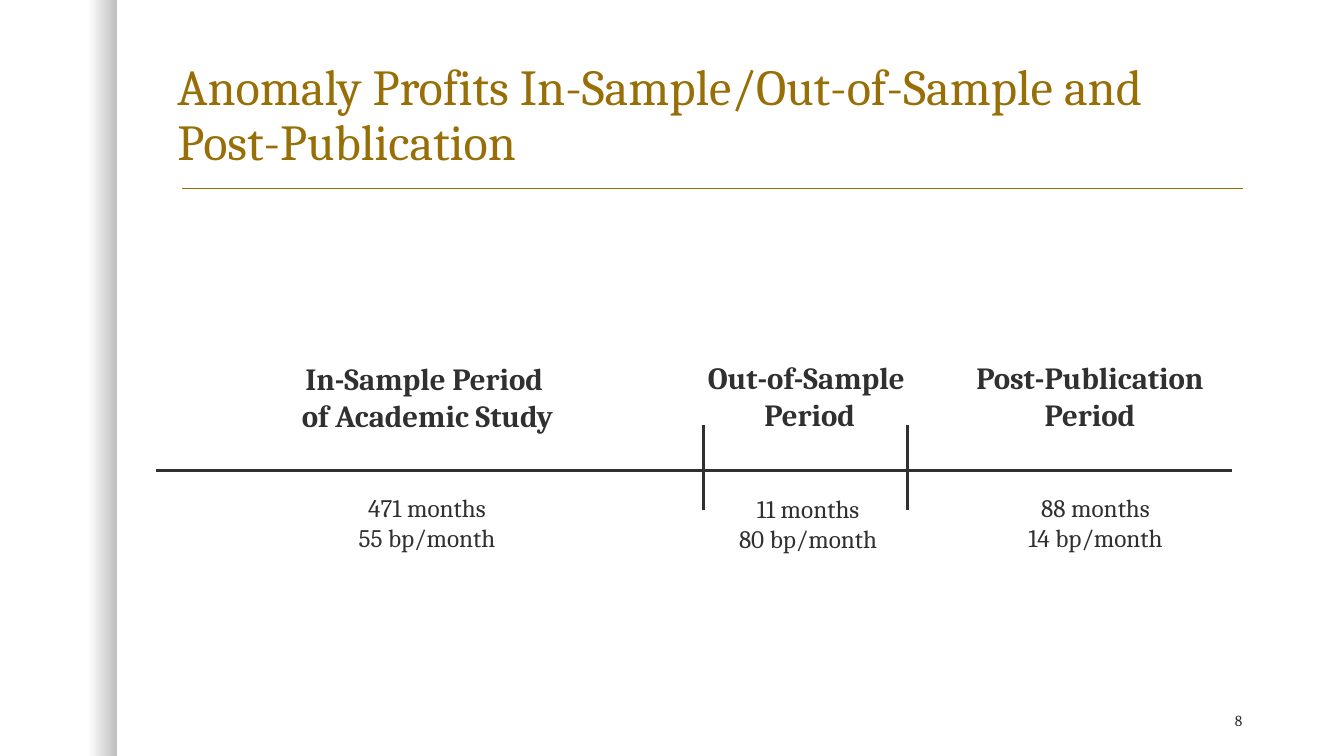
from lxml import etree
from pptx import Presentation
from pptx.dml.color import RGBColor
from pptx.enum import shapes, text
from pptx.oxml.ns import qn
from pptx.util import Inches, Pt

# Content
TITLE = "Anomaly Profits In-Sample/Out-of-Sample and Post-Publication"
PAGE_NUMBER = "8"
# Heading, its box (left, top, width), figures, left and top of their box
PERIODS = [
    ("In-Sample Period \vof Academic Study", (2.85, 3.52, 2.78),
     ["471 months", "55 bp/month"], (3.41, 4.83)),
    ("Out-of-Sample \vPeriod", (6.88, 3.51, 2.3),
     ["11 months", "80 bp/month"], (7.19, 4.84)),
    ("Post-Publication\vPeriod", (9.54, 3.51, 2.54),
     ["88 months", "14 bp/month"], (10.04, 4.83)),
]
PERIOD_BOUNDARIES = [6.98, 9]

FONT = "Cambria"
GOLD, DARK = "986F07", "303030"


def color(hex_string):
    return RGBColor.from_string(hex_string)


def format_text(shape, size, hex_color, align, bold=False):
    for paragraph in shape.text_frame.paragraphs:
        paragraph.alignment = align
        for run in paragraph.runs:
            run.font.name = FONT
            run.font.size = Pt(size)
            run.font.bold = bold
            run.font.color.rgb = color(hex_color)


def add_text(slide, lines, left, top, width, height, size,
             align=text.PP_ALIGN.CENTER, bold=False):
    box = slide.shapes.add_textbox(
        Inches(left), Inches(top), Inches(width), Inches(height))
    box.text_frame.word_wrap = False
    box.text_frame.text = "\n".join(lines)
    format_text(box, size, DARK, align, bold)
    return box


def add_line(slide, x1, y1, x2, y2, hex_color, width):
    line = slide.shapes.add_connector(
        shapes.MSO_CONNECTOR.STRAIGHT,
        Inches(x1), Inches(y1), Inches(x2), Inches(y2))
    line.line.color.rgb = color(hex_color)
    line.line.width = Pt(width)
    etree.SubElement(line._element.spPr, qn("a:effectLst"))


def add_side_band(slide):
    band = slide.shapes.add_shape(
        shapes.MSO_SHAPE.RECTANGLE, 0, 0, Inches(1.16), Inches(7.5))
    band.shadow.inherit = False
    band.line.fill.background()
    band.fill.gradient()
    band.fill.gradient_angle = 0
    stops = [(0.75, "FFFFFF"), (1, "BFBFBF")]
    for stop, (position, hex_color) in zip(band.fill.gradient_stops, stops):
        stop.position = position
        stop.color.rgb = color(hex_color)


def add_title(slide):
    title = slide.shapes.title
    title.left, title.top = Inches(1.66), Inches(0.42)
    title.width, title.height = Inches(10.75), Inches(1.33)
    frame = title.text_frame
    frame.text = TITLE
    frame.word_wrap = True
    frame.auto_size = text.MSO_AUTO_SIZE.NONE
    frame.vertical_anchor = text.MSO_ANCHOR.BOTTOM
    frame.paragraphs[0].line_spacing = 0.9
    format_text(title, 36, GOLD, text.PP_ALIGN.LEFT)


def main():
    presentation = Presentation()
    presentation.slide_width = Inches(13.33)
    presentation.slide_height = Inches(7.5)
    slide = presentation.slides.add_slide(presentation.slide_layouts[5])

    # Frame of the slide
    add_side_band(slide)
    add_line(slide, 1.81, 1.87, 12.33, 1.87, GOLD, 1)
    add_title(slide)
    number = add_text(slide, [PAGE_NUMBER], 11.25, 7, 1.17, 0.3, 11,
                      text.PP_ALIGN.RIGHT)
    number.text_frame.word_wrap = True
    number.text_frame.vertical_anchor = text.MSO_ANCHOR.MIDDLE

    # Timeline with period boundaries
    add_line(slide, 1.55, 4.67, 12.22, 4.67, DARK, 2.25)
    for x in PERIOD_BOUNDARIES:
        add_line(slide, x, 4.22, x, 5.06, DARK, 2.25)

    # Headings above the timeline, figures below it
    for heading, (left, top, width), figures, figures_at in PERIODS:
        add_text(slide, [heading], left, top, width, 0.84, 22, bold=True)
        add_text(slide, figures, *figures_at, 1.65, 0.71, 18)

    presentation.save("out.pptx")


if __name__ == "__main__":
    main()
